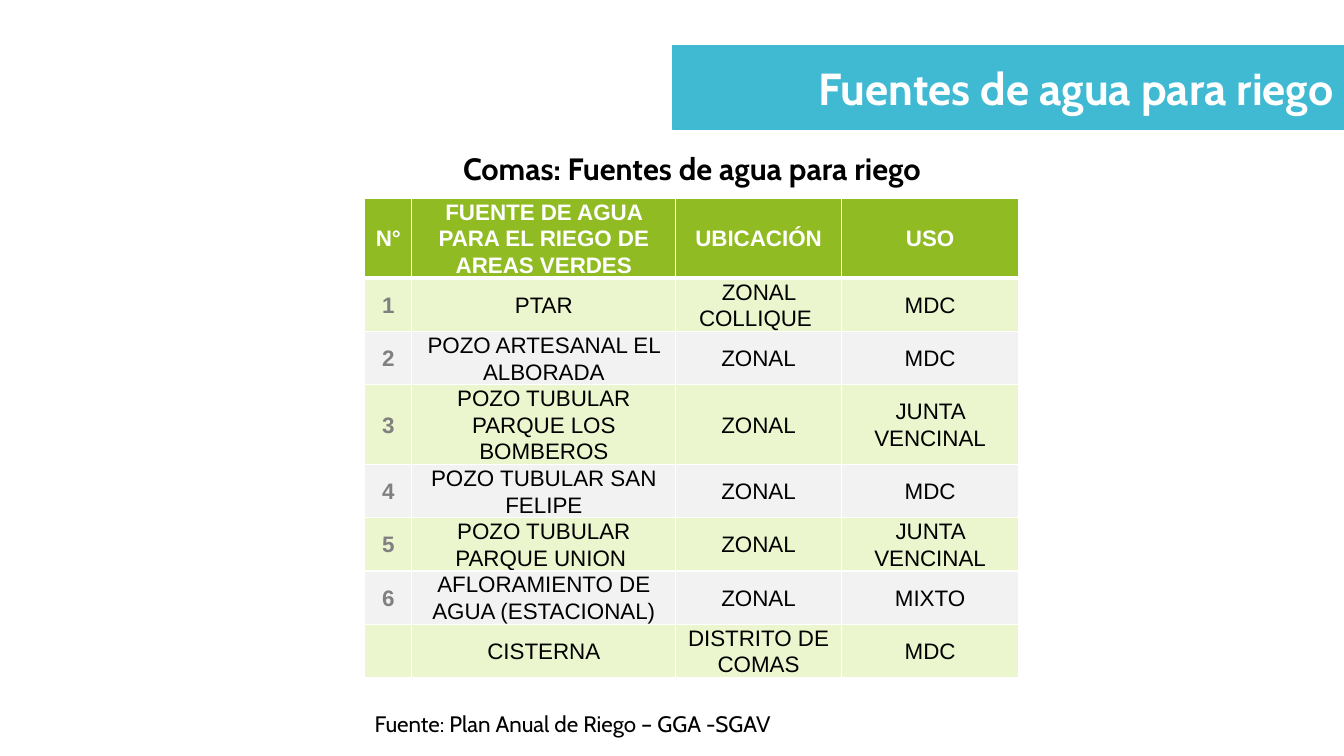
from dataclasses import dataclass

from lxml import etree
from pptx import Presentation
from pptx import util as u
from pptx.dml import color
from pptx.enum import text
from pptx.oxml import ns

WHITE, BLACK, GRAY = "FFFFFF", "000000", "808080"
BLUE, GREEN, LIME, SILVER = "40BAD2", "90BB23", "EBF6CE", "F2F2F2"
LEFT, WIDTH = 260.6, 467.3
LINE_HEIGHT = 19


@dataclass
class Style:
    size: float
    font: str
    color: str
    bold: bool
    align: text.PP_ALIGN


@dataclass
class Source:
    number: str
    name: str
    location: str
    use: str
    lines: int = 2


@dataclass
class Label:
    words: str
    top: float
    height: float
    style: Style


HEADER = Source("N°", "FUENTE DE AGUA PARA EL RIEGO DE AREAS VERDES", "UBICACIÓN", "USO", 3)
SOURCES = [
    Source("1", "PTAR", "ZONAL COLLIQUE ", "MDC"),
    Source("2", "POZO ARTESANAL EL ALBORADA", "ZONAL", "MDC"),
    Source("3", "POZO TUBULAR PARQUE LOS BOMBEROS", "ZONAL", "JUNTA VENCINAL", 3),
    Source("4", "POZO TUBULAR SAN FELIPE", "ZONAL", "MDC"),
    Source("5", "POZO TUBULAR PARQUE UNION ", "ZONAL", "JUNTA VENCINAL"),
    Source("6", "AFLORAMIENTO DE AGUA (ESTACIONAL)", "ZONAL", "MIXTO"),
    Source("", "CISTERNA", "DISTRITO DE COMAS", "MDC"),
]
COLUMN_WIDTHS = [33.6, 188.6, 118.2, 126.9]
LABELS = [
    Label("Comas: Fuentes de agua para riego", 103.7, 33.8,
          Style(22, "Cabin", BLACK, True, text.PP_ALIGN.CENTER)),
    Label("Fuente: Plan Anual de Riego – GGA -SGAV", 504, 26.6,
          Style(16, "Cabin", BLACK, False, text.PP_ALIGN.LEFT)),
]


def rgb(code: str) -> color.RGBColor:
    return color.RGBColor.from_string(code)


def paint(target, code: str) -> None:
    target.fill.solid()
    target.fill.fore_color.rgb = rgb(code)


def write(frame, words: str, style: Style):
    para = frame.paragraphs[0]
    para.alignment = style.align
    span = para.add_run()
    span.text = words
    span.font.size = u.Pt(style.size)
    span.font.name = style.font
    span.font.bold = style.bold
    span.font.color.rgb = rgb(style.color)
    return para


def add_border(cell, side: str, width: float) -> None:
    properties = cell._tc.get_or_add_tcPr()
    line = etree.SubElement(properties, ns.qn(f"a:ln{side}"), w=str(u.Pt(width)))
    fill = etree.SubElement(line, ns.qn("a:solidFill"))
    etree.SubElement(fill, ns.qn("a:srgbClr"), val=WHITE)


def fill_cell(cell, words: str, row: int, column: int) -> None:
    cell.margin_left = cell.margin_right = u.Pt(3.6)
    cell.margin_top = cell.margin_bottom = u.Pt(0)
    cell.vertical_anchor = text.MSO_ANCHOR.MIDDLE
    for side in "LRTB":
        thick = (side == "B" and row == 0) or (side == "T" and row == 1)
        add_border(cell, side, 3 if thick else 1)
    paint(cell, GREEN if row == 0 else LIME if row % 2 else SILVER)
    if words:
        shade = WHITE if row == 0 else GRAY if column == 0 else BLACK
        style = Style(16, "Arial", shade, row == 0 or column == 0, text.PP_ALIGN.CENTER)
        write(cell.text_frame, words, style).line_spacing = 1.07


def add_title(page) -> None:
    title = page.shapes.title
    title.left, title.top = u.Pt(480.2), u.Pt(32.4)
    title.width, title.height = u.Pt(479.8), u.Pt(59.8)
    paint(title, BLUE)
    title.line.color.rgb = rgb(BLUE)
    title.line.width = u.Pt(0.85)
    frame = title.text_frame
    frame.auto_size = text.MSO_AUTO_SIZE.NONE
    frame.vertical_anchor = text.MSO_ANCHOR.MIDDLE
    write(frame, "Fuentes de agua para riego",
          Style(32, "Cabin", WHITE, True, text.PP_ALIGN.RIGHT))


def add_sources(page) -> None:
    records = [HEADER, *SOURCES]
    height = LINE_HEIGHT * sum(record.lines for record in records)
    table = page.shapes.add_table(len(records), len(COLUMN_WIDTHS), u.Pt(LEFT), u.Pt(141.8),
                                  u.Pt(WIDTH), u.Pt(height)).table
    for column, width in zip(table.columns, COLUMN_WIDTHS):
        column.width = u.Pt(width)
    for row, record in enumerate(records):
        table.rows[row].height = u.Pt(LINE_HEIGHT * record.lines)
        values = (record.number, record.name, record.location, record.use)
        for column, words in enumerate(values):
            fill_cell(table.cell(row, column), words, row, column)


def add_label(page, label: Label) -> None:
    box = page.shapes.add_textbox(u.Pt(LEFT), u.Pt(label.top), u.Pt(WIDTH), u.Pt(label.height))
    box.text_frame.word_wrap = True
    box.text_frame.auto_size = text.MSO_AUTO_SIZE.SHAPE_TO_FIT_TEXT
    write(box.text_frame, label.words, label.style)


def main() -> None:
    deck = Presentation()
    deck.slide_width, deck.slide_height = u.Pt(960), u.Pt(540)
    page = deck.slides.add_slide(deck.slide_layouts[5])
    add_title(page)
    add_sources(page)
    for label in LABELS:
        add_label(page, label)
    deck.save("out.pptx")


if __name__ == "__main__":
    main()
